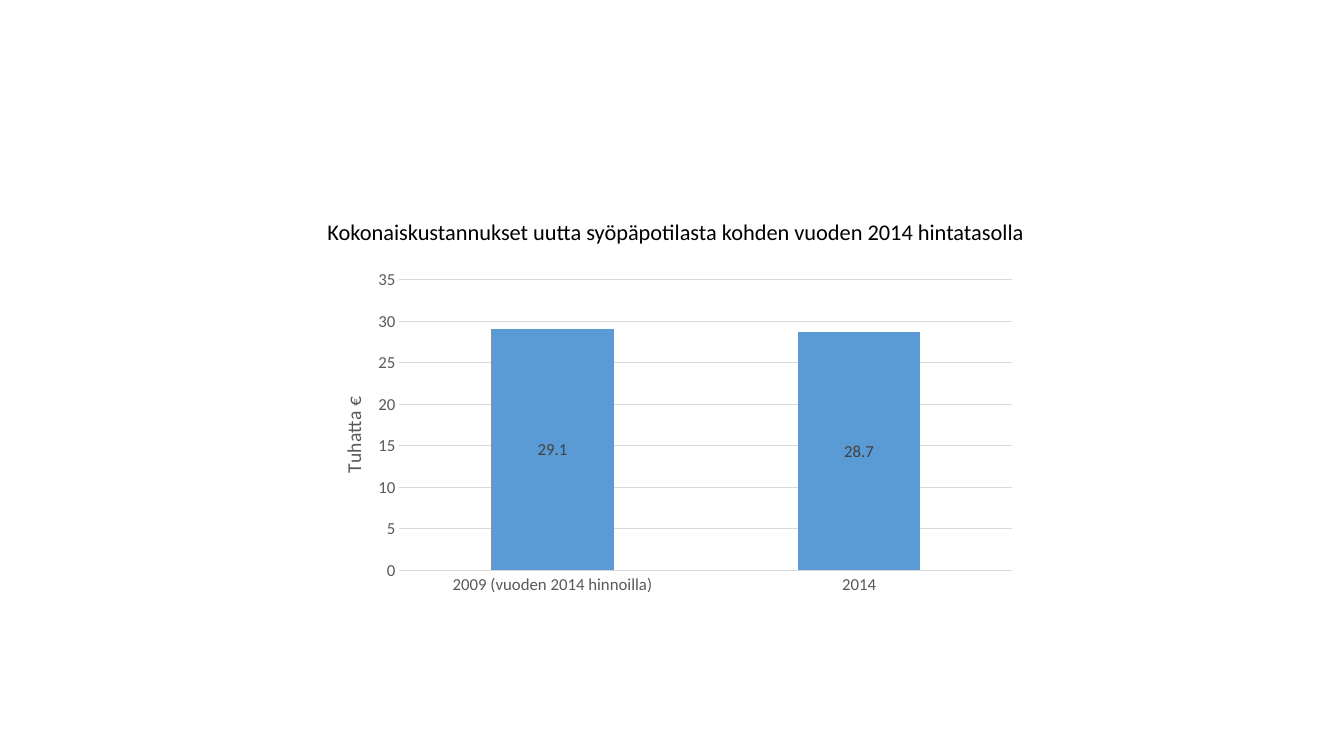
import dataclasses

import pptx
import pptx.chart.data
import pptx.dml.color
import pptx.enum.chart
import pptx.enum.text
import pptx.oxml
import pptx.oxml.ns
import pptx.util

SLIDE_W, SLIDE_H = 13.33, 7.5


@dataclasses.dataclass(frozen=True)
class Theme:
    font: str = "Calibri"
    heading: str = "000000"
    axis: str = "595959"
    label: str = "404040"
    grid: str = "D9D9D9"
    bar: str = "5B9BD5"
    heading_size: int = 16
    axis_title_size: int = 14
    label_size: int = 12
    line_width: float = 0.75


THEME = Theme()
COSTS = {"2009 (vuoden 2014 hinnoilla)": 29.1, "2014": 28.7}


def rgb(value):
    return pptx.dml.color.RGBColor.from_string(value)


def set_font(font, size, color):
    font.name = THEME.font
    font.size = pptx.util.Pt(size)
    font.bold = False
    font.color.rgb = rgb(color)


def set_line(line):
    line.color.rgb = rgb(THEME.grid)
    line.width = pptx.util.Pt(THEME.line_width)


def share_box(left, top, width, height):
    """Turn shares of the slide's size into lengths."""
    return [pptx.util.Inches(share * side) for share, side in
            zip((left, top, width, height), (SLIDE_W, SLIDE_H) * 2)]


def set_layout(parent, index, target=None, **shares):
    """Fix the place of a chart part, in shares of the chart's size."""
    for old in parent.findall(pptx.oxml.ns.qn("c:layout")):
        parent.remove(old)
    target_xml = f'<c:layoutTarget val="{target}"/>' if target else ""
    modes = "".join(f'<c:{k}Mode val="edge"/>' for k in "xy")
    values = "".join(f'<c:{k} val="{v}"/>' for k, v in shares.items())
    parent.insert(index, pptx.oxml.parse_xml(
        f'<c:layout {pptx.oxml.ns.nsdecls("c")}><c:manualLayout>'
        f"{target_xml}{modes}{values}</c:manualLayout></c:layout>"))


def add_heading(s, box, text):
    tf = s.shapes.add_textbox(*box).text_frame
    tf.word_wrap = True
    tf.auto_size = pptx.enum.text.MSO_AUTO_SIZE.SHAPE_TO_FIT_TEXT
    tf.text = text
    set_font(tf.paragraphs[0].runs[0].font, THEME.heading_size, THEME.heading)


def style_axes(chart):
    for axis in (chart.category_axis, chart.value_axis):
        axis.major_tick_mark = pptx.enum.chart.XL_TICK_MARK.NONE
        axis.minor_tick_mark = pptx.enum.chart.XL_TICK_MARK.NONE
        set_font(axis.tick_labels.font, THEME.label_size, THEME.axis)
    set_line(chart.category_axis.format.line)

    costs = chart.value_axis
    costs.minimum_scale = 0
    costs.format.line.fill.background()
    set_line(costs.major_gridlines.format.line)
    costs.tick_labels.number_format = "0"
    costs.tick_labels.number_format_is_linked = False
    tf = costs.axis_title.text_frame
    tf.text = "Tuhatta €"
    set_font(tf.paragraphs[0].runs[0].font, THEME.axis_title_size, THEME.axis)
    set_layout(costs.axis_title.element, 1, x=0.08, y=0.36)


def add_cost_chart(s, box, costs):
    data = pptx.chart.data.CategoryChartData(number_format="0.0")
    data.categories = list(costs)
    data.add_series("Series 1", list(costs.values()))
    chart = s.shapes.add_chart(
        pptx.enum.chart.XL_CHART_TYPE.COLUMN_STACKED, *box, data).chart
    chart.has_title = False
    chart.has_legend = False
    set_font(chart.font, THEME.label_size, THEME.axis)
    style_axes(chart)

    plot = chart.plots[0]
    plot.vary_by_categories = False
    plot.gap_width = 150
    plot.overlap = 100
    series = plot.series[0]
    series.format.fill.solid()
    series.format.fill.fore_color.rgb = rgb(THEME.bar)
    labels = series.data_labels
    labels.show_value = True
    labels.position = pptx.enum.chart.XL_LABEL_POSITION.CENTER
    labels.number_format = "0.0"
    labels.number_format_is_linked = False
    set_font(labels.font, THEME.label_size, THEME.label)

    plot_area = chart.element.find(".//" + pptx.oxml.ns.qn("c:plotArea"))
    set_layout(plot_area, 0, "inner", x=0.164, y=0.034, w=0.816, h=0.838)


def main():
    prs = pptx.Presentation()
    prs.slide_width = pptx.util.Inches(SLIDE_W)
    prs.slide_height = pptx.util.Inches(SLIDE_H)
    s = prs.slides.add_slide(prs.slide_layouts[6])
    add_cost_chart(s, share_box(0.2055, 0.3547, 0.5589, 0.4587), COSTS)
    add_heading(s, share_box(0.2363, 0.2813, 0.5851, 0.0493),
                "Kokonaiskustannukset uutta syöpäpotilasta kohden "
                "vuoden 2014 hintatasolla")
    prs.save("out.pptx")


if __name__ == "__main__":
    main()
